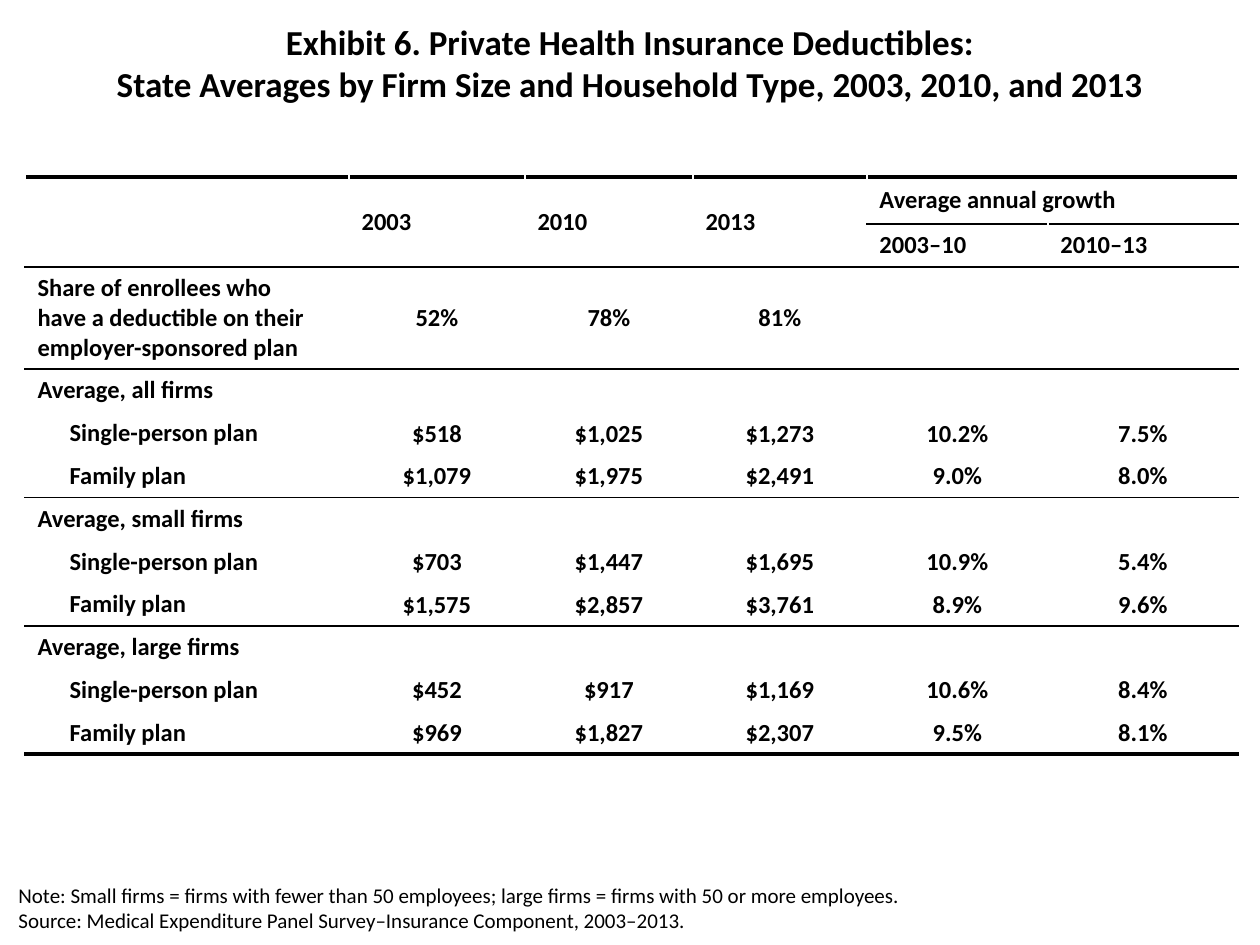
from lxml import etree
from pptx import Presentation
from pptx.dml.color import RGBColor
from pptx.enum.text import MSO_ANCHOR, PP_ALIGN
from pptx.oxml.ns import qn
from pptx.util import Pt

MIDDLE, TOP = MSO_ANCHOR.MIDDLE, MSO_ANCHOR.TOP
LEFT, CENTER = PP_ALIGN.LEFT, PP_ALIGN.CENTER
SCALE = 914400 / 126
HEX = {"ink": "000000", "paper": "FFFFFF"}
THIN, THICK = 1, 2.25
INDENT = 32

WIDTHS = [324, 176, 168, 174, 181, 190]
HEIGHTS = [47, 43, 102] + [43, 42, 43] * 3
HEAD = 2  # header rows
RULES = {0: THICK, 2: THIN, 3: THIN, 6: THIN, 9: THIN, 12: THICK}
SPANS = [((0, col), (1, col)) for col in range(4)] + [((0, 4), (0, 5))]

SINGLE, FAMILY = "Single-person plan", "Family plan"
ROWS = [
    ["", "2003", "2010", "2013", "Average annual growth", ""],
    ["", "", "", "", "2003–10", "2010–13"],
    ["Share of enrollees who\vhave a deductible on their employer-sponsored plan",
     "52%", "78%", "81%", "", ""],
    ["Average, all firms"] + [""] * 5,
    [SINGLE, "$518", "$1,025", "$1,273", "10.2%", "7.5%"],
    [FAMILY, "$1,079", "$1,975", "$2,491", "9.0%", "8.0%"],
    ["Average, small firms"] + [""] * 5,
    [SINGLE, "$703", "$1,447", "$1,695", "10.9%", "5.4%"],
    [FAMILY, "$1,575", "$2,857", "$3,761", "8.9%", "9.6%"],
    ["Average, large firms"] + [""] * 5,
    [SINGLE, "$452", "$917", "$1,169", "10.6%", "8.4%"],
    [FAMILY, "$969", "$1,827", "$2,307", "9.5%", "8.1%"],
]
TITLE = ("Exhibit 6. Private Health Insurance Deductibles:\v"
         "State Averages by Firm Size and Household Type, 2003, 2010, and 2013")
NOTES = [
    "Note: Small firms = firms with fewer than 50 employees; "
    "large firms = firms with 50 or more employees.",
    "Source: Medical Expenditure Panel Survey–Insurance Component, 2003–2013.",
]


def px(num):
    return round(num * SCALE)


def style(para, size, bold, align):
    para.alignment = align
    for run in para.runs:
        form = {"name": "Calibri", "size": Pt(size), "bold": bold}
        for key, val in form.items():
            setattr(run.font, key, val)
        run.font.color.rgb = RGBColor.from_string(HEX["ink"])


def add_text(slide, box, lines, size, bold=False, align=LEFT, anchor=TOP):
    frame = slide.shapes.add_textbox(*map(px, box)).text_frame
    frame.word_wrap = True
    frame.vertical_anchor = anchor
    frame.text = "\n".join(lines)
    for para in frame.paragraphs:
        style(para, size, bold, align)


def add_edge(cell, side, width, color):
    props = cell._tc.get_or_add_tcPr()
    line = etree.SubElement(props, qn(f"a:ln{side}"), w=str(Pt(width)))
    fill = etree.SubElement(line, qn("a:solidFill"))
    etree.SubElement(fill, qn("a:srgbClr"), val=HEX[color])


def rule(row, col):
    """Width and colour of the line above a row in one column."""
    if row == 1 and col >= 4:
        return THIN, "ink"
    return (RULES[row], "ink") if row in RULES else (THIN, "paper")


def fill_cell(cell, row, col, text):
    cell.text = text
    cell.vertical_anchor = MIDDLE
    value = col > 0 and row >= HEAD
    para = cell.text_frame.paragraphs[0]
    style(para, 14, True, CENTER if value else LEFT)
    if value or not text:
        for side in ("left", "right", "top"):
            setattr(cell, f"margin_{side}", px(1))
        cell.margin_bottom = 0
    elif text in (SINGLE, FAMILY):
        cell.margin_left += px(INDENT)
    for side in "LR":
        add_edge(cell, side, THIN, "paper")
    add_edge(cell, "T", *rule(row, col))
    add_edge(cell, "B", *rule(row + 1, col))
    cell.fill.background()


def add_grid(slide, left, top):
    box = map(px, (left, top, sum(WIDTHS), sum(HEIGHTS)))
    table = slide.shapes.add_table(len(ROWS), len(WIDTHS), *box).table
    table.first_row = table.horz_banding = False
    for col, width in zip(table.columns, WIDTHS):
        col.width = px(width)
    for row, height in zip(table.rows, HEIGHTS):
        row.height = px(height)
    for row, texts in enumerate(ROWS):
        for col, text in enumerate(texts):
            fill_cell(table.cell(row, col), row, col, text)
    for start, end in SPANS:
        table.cell(*start).merge(table.cell(*end))


def main():
    deck = Presentation()
    deck.slide_width, deck.slide_height = px(1260), px(945)
    slide = deck.slides.add_slide(deck.slide_layouts[6])
    add_grid(slide, 25, 177)
    add_text(slide, (0, 13, 1260, 100), [TITLE], 20, True, CENTER, MIDDLE)
    add_text(slide, (6, 876, 1254, 63), NOTES, 12)
    deck.save("out.pptx")


if __name__ == "__main__":
    main()
